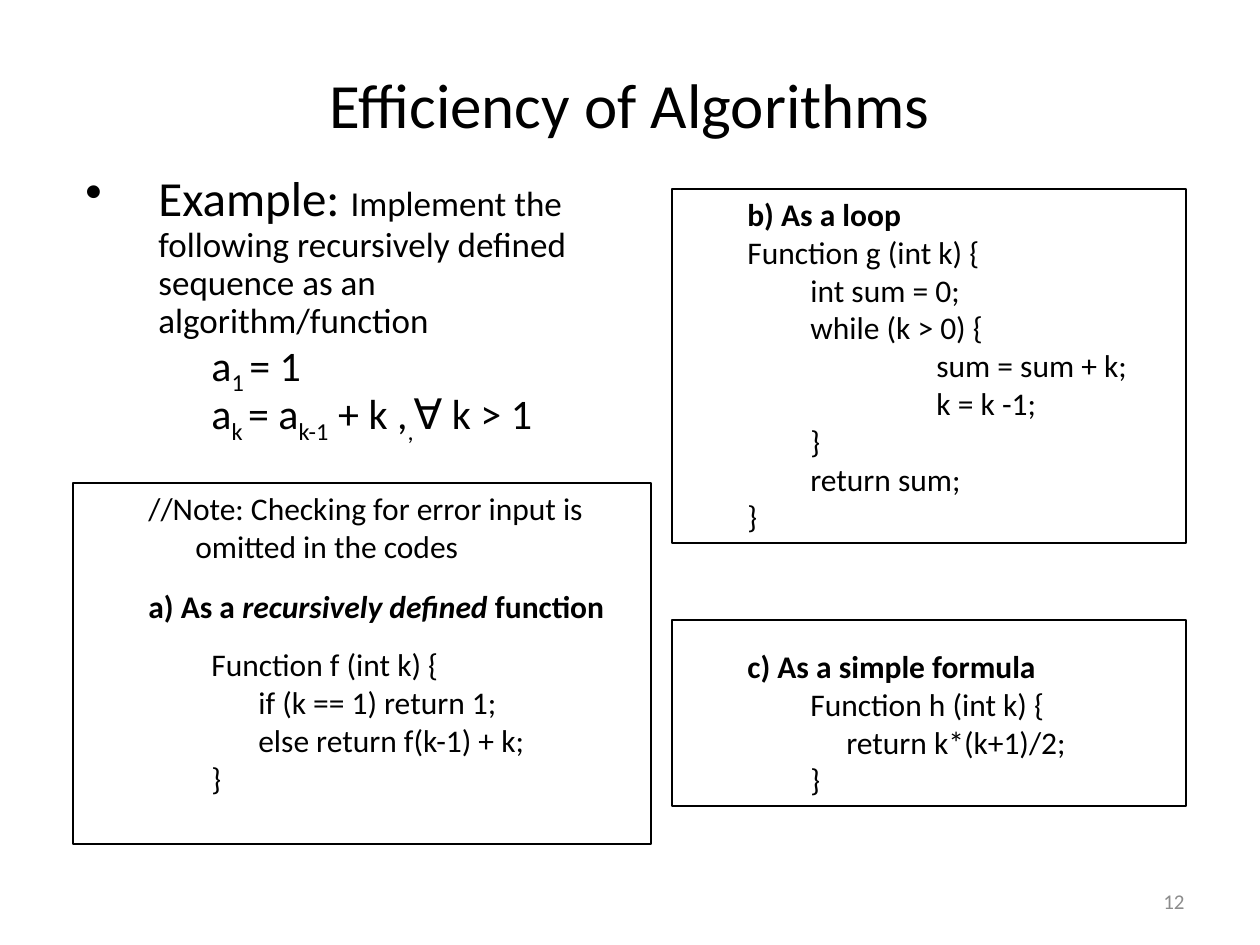
from pptx import Presentation
from pptx.dml.color import RGBColor
from pptx.enum.shapes import MSO_SHAPE as Shape
from pptx.enum.text import MSO_ANCHOR as Anchor, PP_ALIGN as Align
from pptx.oxml.ns import qn
from pptx.util import Emu, Pt
from lxml.etree import SubElement

PX = 914400 / 126
FONT, BLACK, GRAY = "Calibri", "000000", "8C8C8C"

# Line: (left margin, first-line indent, space before in pt, runs)
# Run: (text, style), where style is any of b bold, i italic, s subscript
TITLE = [(0, 0, 0, [("Efficiency of Algorithms", "")])]
NUMBER = [(0, 0, 0, [("12", "")])]
TASK = [(73, -73, 5.6, [
    ("Example: ", ""),
    ("Implement the following recursively defined sequence as an algorithm/function", "")])]
RULES = [
    (126, 0, 4.8, [("a", ""), ("1 ", "s"), ("= 1", "")]),
    (126, 0, 4.8, [("a", ""), ("k ", "s"), ("= a", ""), ("k-1", "s"),
                   (" + k ,", ""), (",", "s"), ("∀ k > 1", "")]),
]
RECUR = [
    (110, -47, 0, [("//Note: Checking for error input is omitted in the codes", "")]),
    (110, -47, 12.6, [("a) As a ", "b"), ("recursively defined ", "bi"), ("function", "b")]),
    (126, 0, 12, [("Function f (int k) {", "")]),
    (173, 0, 0, [("if (k == 1) return 1;", "")]),
    (173, 0, 0, [("else return f(k-1) + k;", "")]),
    (126, 0, 0, [("}", "")]),
]
CLOSED = [
    (63, 0, 0, [("c) As a simple formula", "b")]),
    (126, 0, 0, [("Function h (int k) {", "")]),
    (162, 0, 0, [("return k*(k+1)/2;", "")]),
    (126, 0, 0, [("}", "")]),
]
LOOP = [
    (63, 0, 0, [("b) As a loop", "b")]),
    (63, 0, 0, [("Function g (int k) {", "")]),
    (126, 0, 0, [("int sum = 0;", "")]),
    (126, 0, 0, [("while (k > 0) {", "")]),
    (252, 0, 0, [("sum = sum + k;", "")]),
    (252, 0, 0, [("k = k -1;", "")]),
    (126, 0, 0, [("}", "")]),
    (126, 0, 0, [("return sum;", "")]),
    (63, 0, 0, [("}", "")]),
]
BOXES = [
    ((73, 483, 578, 361), 6, RECUR),
    ((672, 620, 514, 186), 27, CLOSED),
    ((672, 189, 514, 354), 6, LOOP),
]


def px(n):
    return Emu(round(n * PX))


def color(code):
    return RGBColor.from_string(code)


def write(frame, lines, size, tint=BLACK, align=Align.LEFT, gap=None):
    frame.word_wrap = True
    for left, first, before, runs in lines:
        old = frame.paragraphs[-1]
        para = frame.add_paragraph() if old.runs else old
        para.alignment, para.line_spacing = align, gap
        para.space_before = Pt(before)
        para.font.name, para.font.size = FONT, Pt(size)
        para.font.color.rgb = color(tint)
        props = para._p.get_or_add_pPr()
        props.set("marL", str(px(left)))
        props.set("indent", str(px(first)))
        for text, style in runs:
            run = para.add_run()
            run.text = text
            if "b" in style:
                run.font.bold = True
            if "i" in style:
                run.font.italic = True
            if "s" in style:
                run.font._element.set("baseline", "-25000")


def label(slide, at, anchor=Anchor.TOP):
    frame = slide.shapes.add_textbox(*map(px, at)).text_frame
    frame.vertical_anchor = anchor
    return frame


def bullet(para, mark):
    props = para._p.get_or_add_pPr()
    item = SubElement(props, qn("a:buChar"))
    item.set("char", mark)
    fill = props.find(qn("a:defRPr"))
    if fill is not None:
        fill.addprevious(item)


def panel(slide, at, top, lines):
    box = slide.shapes.add_shape(Shape.RECTANGLE, *map(px, at))
    box.shadow.inherit = False
    box.fill.background()
    box.line.color.rgb = color(BLACK)
    box.line.width = Pt(0.75)
    frame = box.text_frame
    frame.vertical_anchor = Anchor.TOP
    frame.margin_top = px(top)
    write(frame, lines, 18)


def main():
    deck = Presentation()
    deck.slide_width, deck.slide_height = px(1260), px(945)
    slide = deck.slides.add_slide(deck.slide_layouts[6])

    write(label(slide, (903, 876, 294, 50), Anchor.MIDDLE), NUMBER, 12, GRAY, Align.RIGHT)
    write(label(slide, (63, 59, 1134, 88), Anchor.MIDDLE), TITLE, 36, align=Align.CENTER)

    body = label(slide, (73, 168, 578, 273))
    write(body, TASK, 20, gap=0.9)
    write(body, RULES, 24, gap=0.7)
    lead = body.paragraphs[0]
    lead.runs[0].font.size = Pt(28)
    bullet(lead, "•")

    for at, top, lines in BOXES:
        panel(slide, at, top, lines)
    deck.save("out.pptx")


if __name__ == "__main__":
    main()
